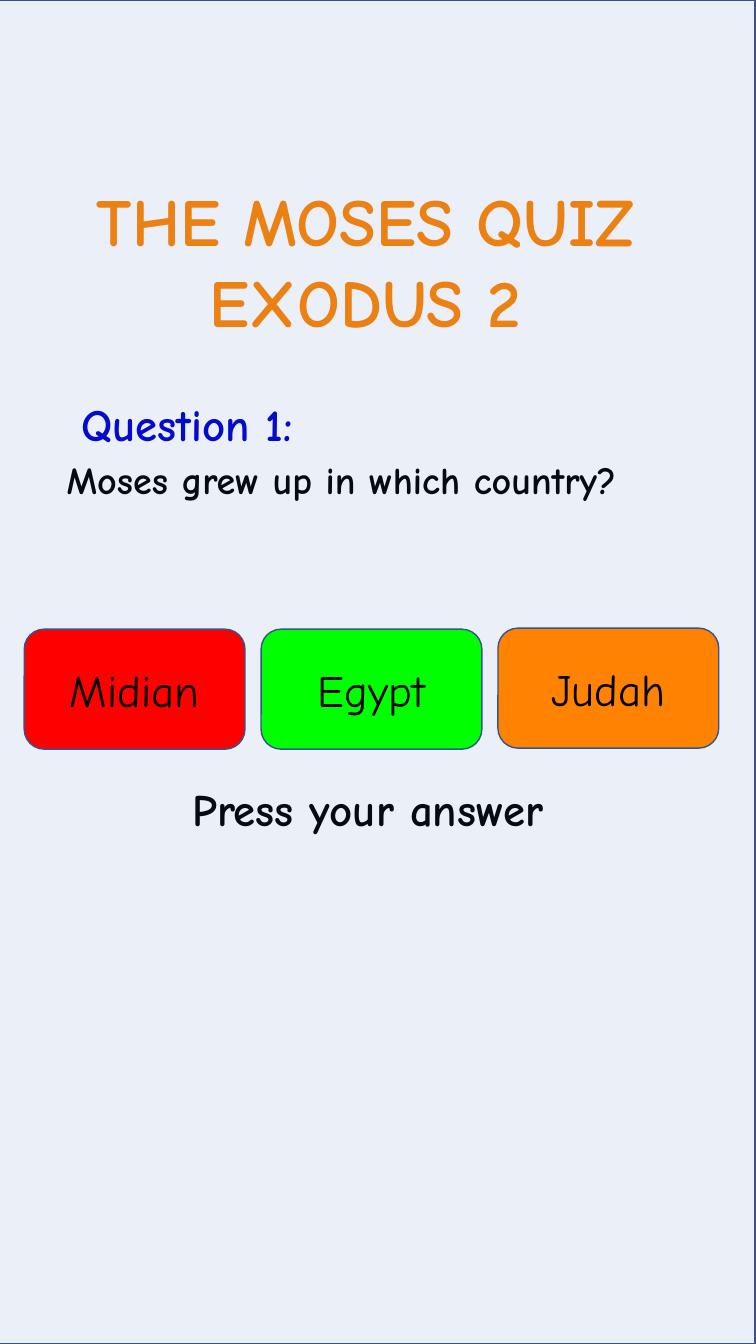
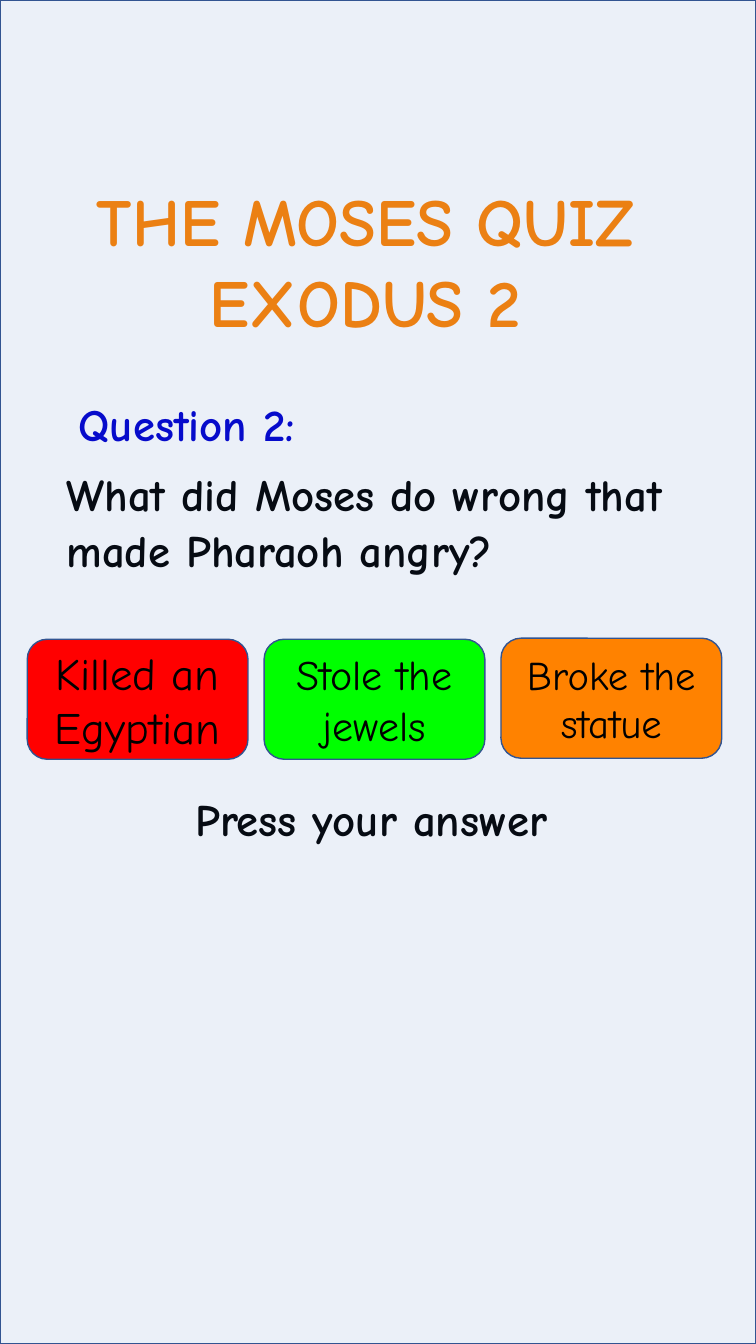
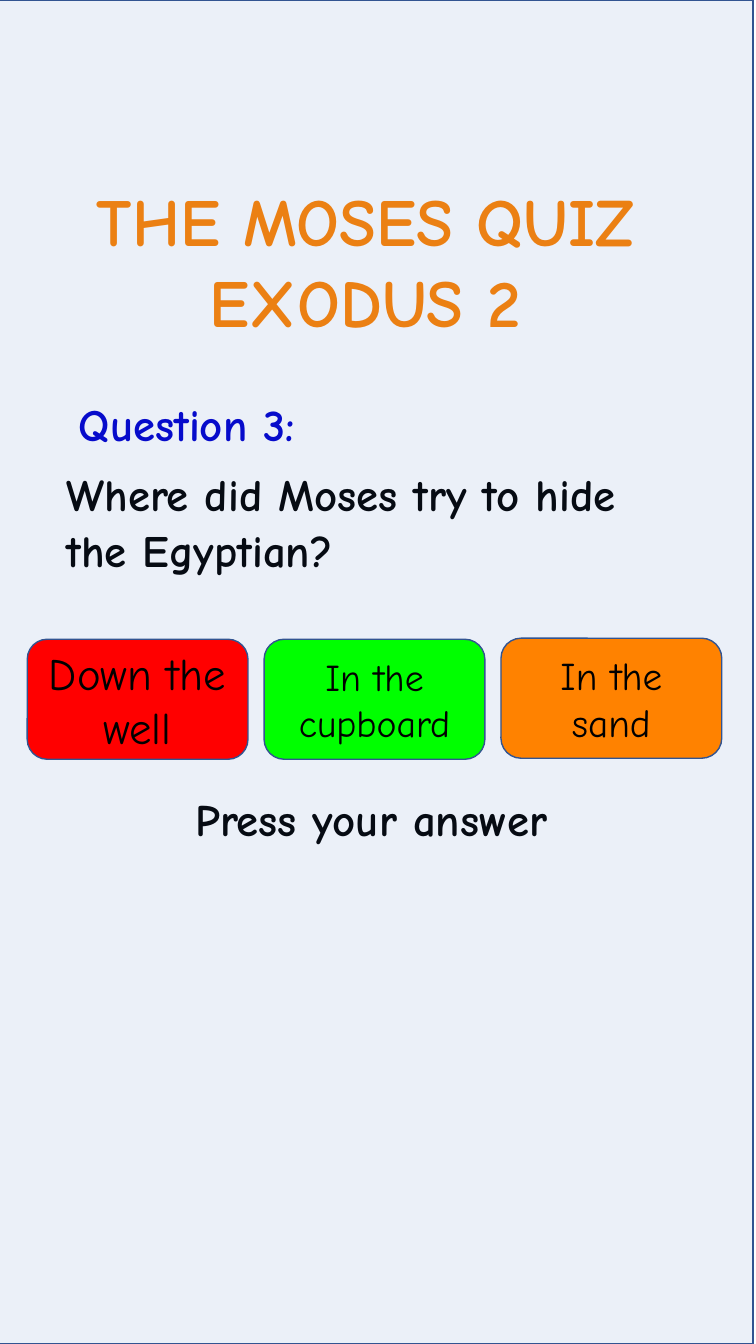
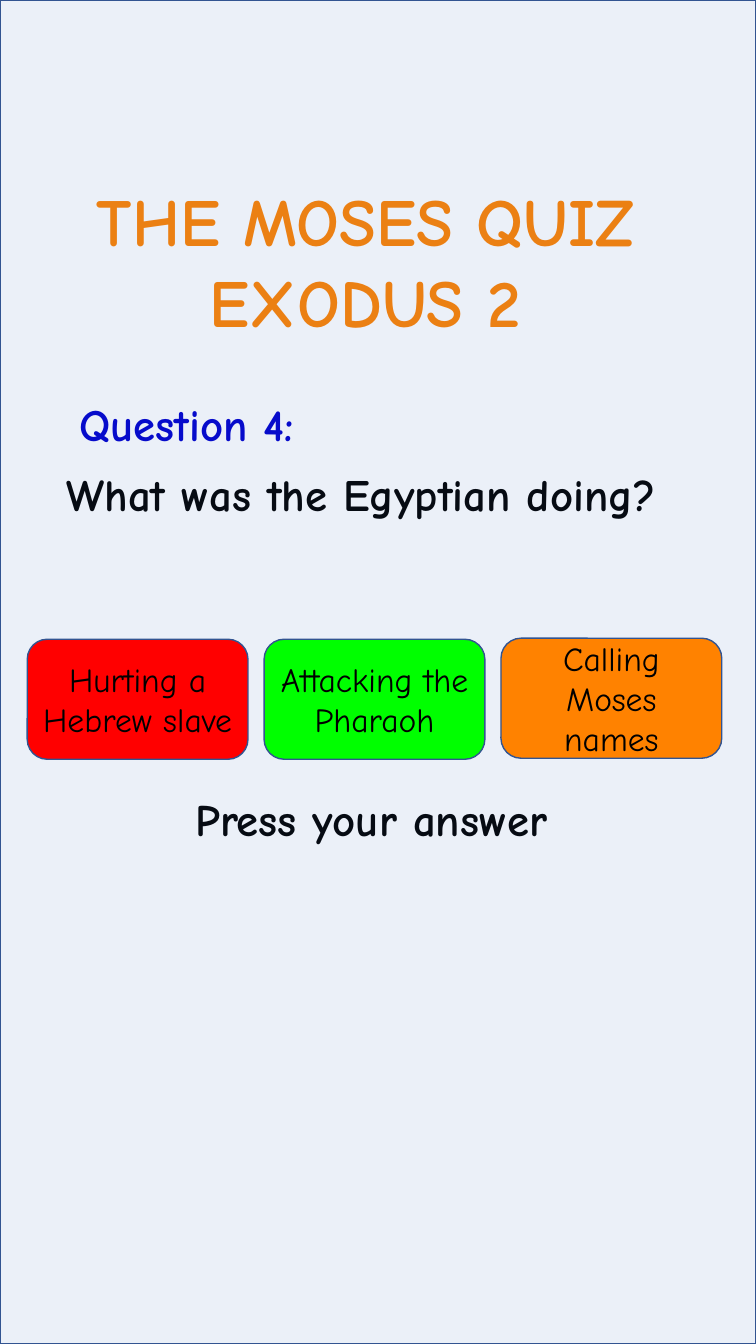
from dataclasses import dataclass

from lxml.etree import SubElement
from pptx import Presentation
from pptx.dml.color import RGBColor
from pptx.enum.shapes import MSO_SHAPE
from pptx.enum.text import MSO_ANCHOR, MSO_AUTO_SIZE, PP_ALIGN
from pptx.oxml.ns import qn
from pptx.util import Inches, Pt

SLIDE_WIDTH, SLIDE_HEIGHT = 7.5, 13.33
FONT = "Comic Neue"
ORANGE, RED, GREEN = "FF8200", "FF0000", "00FF00"
BLUE, BLACK = "0000CC", "000000"
TINT, BORDER = "4472C4", "325491"
TITLE_LINES = ("THE MOSES QUIZ ", "EXODUS 2 ")

BUTTON_WIDTH, BUTTON_HEIGHT, BUTTON_STEP = 2.19, 1.19, 2.35
BUTTON_STYLES = ((RED, 0), (GREEN, 0), (ORANGE, -0.01))  # fill, vertical shift


@dataclass
class Question:
    text: str
    answers: tuple  # (wording, point size) from left to right
    text_size: float = 32
    line_spacing: object = Pt(40)
    text_height: float = 1.46
    buttons_left: float = 0.27
    buttons_top: float = 6.34
    tint_left: float = 0


QUESTIONS = (
    Question(
        "Moses grew up in which country?",
        (("Midian", 32), ("Egypt", 32), ("Judah", 32)),
        text_size=27.2, line_spacing=0.8, text_height=0.72,
        buttons_left=0.24, buttons_top=6.24, tint_left=-0.01,
    ),
    Question(
        "What did Moses do wrong that made Pharaoh angry?",
        (("Killed an Egyptian", 32), ("Stole the jewels", 30), ("Broke the statue", 29)),
    ),
    Question(
        "Where did Moses try to hide the Egyptian?",
        (("Down the well", 32), ("In the cupboard", 27), ("In the sand", 28)),
        tint_left=-0.03,
    ),
    Question(
        "What was the Egyptian doing?",
        (("Hurting a Hebrew slave", 24), ("Attacking the Pharaoh", 24), ("Calling Moses names", 24)),
    ),
)


def color(value):
    return RGBColor.from_string(value)


def place(shape, left, top, width, height):
    shape.left, shape.top = Inches(left), Inches(top)
    shape.width, shape.height = Inches(width), Inches(height)


def set_frame(shape, wrap=True, anchor=MSO_ANCHOR.TOP):
    frame = shape.text_frame
    frame.word_wrap = wrap
    frame.auto_size = MSO_AUTO_SIZE.NONE if wrap else MSO_AUTO_SIZE.SHAPE_TO_FIT_TEXT
    frame.vertical_anchor = anchor
    return frame


def write(paragraph, text, size, text_color=BLACK, bold=True, align=PP_ALIGN.CENTER):
    paragraph.alignment = align
    run = paragraph.add_run()
    run.text = text
    run.font.name = FONT
    run.font.size = Pt(size)
    run.font.bold = bold
    run.font.color.rgb = color(text_color)
    return run


def outline_text(run, line_color, width):
    properties = run.font._element
    line = SubElement(properties, qn("a:ln"), w=str(Pt(width)))
    fill = SubElement(line, qn("a:solidFill"))
    SubElement(fill, qn("a:srgbClr"), val=line_color)
    properties.insert(0, line)


def write_left_aligned(paragraph, text, size, line_spacing):
    paragraph.line_spacing = line_spacing
    paragraph.space_before = Pt(7.5)
    write(paragraph, text, size, align=PP_ALIGN.LEFT)


def add_text_box(slide, left, top, width, height, wrap=True):
    """Add an empty text box and return its first paragraph."""
    box = slide.shapes.add_textbox(
        Inches(left), Inches(top), Inches(width), Inches(height))
    return set_frame(box, wrap).paragraphs[0]


def add_bordered_shape(slide, kind, left, top, width, height, fill):
    shape = slide.shapes.add_shape(
        kind, Inches(left), Inches(top), Inches(width), Inches(height))
    shape.shadow.inherit = False
    shape.fill.solid()
    shape.fill.fore_color.rgb = color(fill)
    shape.line.color.rgb = color(BORDER)
    shape.line.width = Pt(1)
    return shape


def add_title(slide):
    title = slide.shapes.title
    place(title, 0.3, 1.73, 6.89, 1.72)
    frame = set_frame(title, wrap=False)
    for index, text in enumerate(TITLE_LINES):
        paragraph = frame.add_paragraph() if index else frame.paragraphs[0]
        outline_text(write(paragraph, text, 48, ORANGE), RED, 1.06)


def add_question(slide, number, question):
    label = add_text_box(slide, 0.47, 3.89, 2.77, 0.64, wrap=False)
    write(label, f"Question {number}:", 32, BLUE)
    subtitle = slide.placeholders[1]
    place(subtitle, 0.56, 4.56, 6.36, question.text_height)
    write_left_aligned(set_frame(subtitle).paragraphs[0], question.text,
                       question.text_size, question.line_spacing)


def add_prompt(slide, question):
    prompt = add_text_box(
        slide, question.buttons_left + 1.57, question.buttons_top + 1.52, 4.22, 0.72)
    write_left_aligned(prompt, "Press your answer", 32, 0.9)


def add_tint(slide, left):
    """Cover the slide with a bordered sheet of 10 % opacity."""
    sheet = add_bordered_shape(
        slide, MSO_SHAPE.RECTANGLE, left, 0, SLIDE_WIDTH, SLIDE_HEIGHT, TINT)
    fill_color = sheet._element.spPr.find(qn("a:solidFill"))[0]
    SubElement(fill_color, qn("a:alpha"), val="10000")


def add_answers(slide, question):
    for index, (answer, style) in enumerate(zip(question.answers, BUTTON_STYLES)):
        (text, size), (fill, shift) = answer, style
        button = add_bordered_shape(
            slide, MSO_SHAPE.ROUNDED_RECTANGLE,
            question.buttons_left + index * BUTTON_STEP, question.buttons_top + shift,
            BUTTON_WIDTH, BUTTON_HEIGHT, fill)
        frame = set_frame(button, anchor=MSO_ANCHOR.MIDDLE)
        write(frame.paragraphs[0], text, size, bold=False)


def main():
    presentation = Presentation()
    presentation.slide_width = Inches(SLIDE_WIDTH)
    presentation.slide_height = Inches(SLIDE_HEIGHT)
    for number, question in enumerate(QUESTIONS, start=1):
        slide = presentation.slides.add_slide(presentation.slide_layouts[0])
        add_title(slide)
        add_question(slide, number, question)
        add_prompt(slide, question)
        add_tint(slide, question.tint_left)
        add_answers(slide, question)
    presentation.save("out.pptx")


if __name__ == "__main__":
    main()
